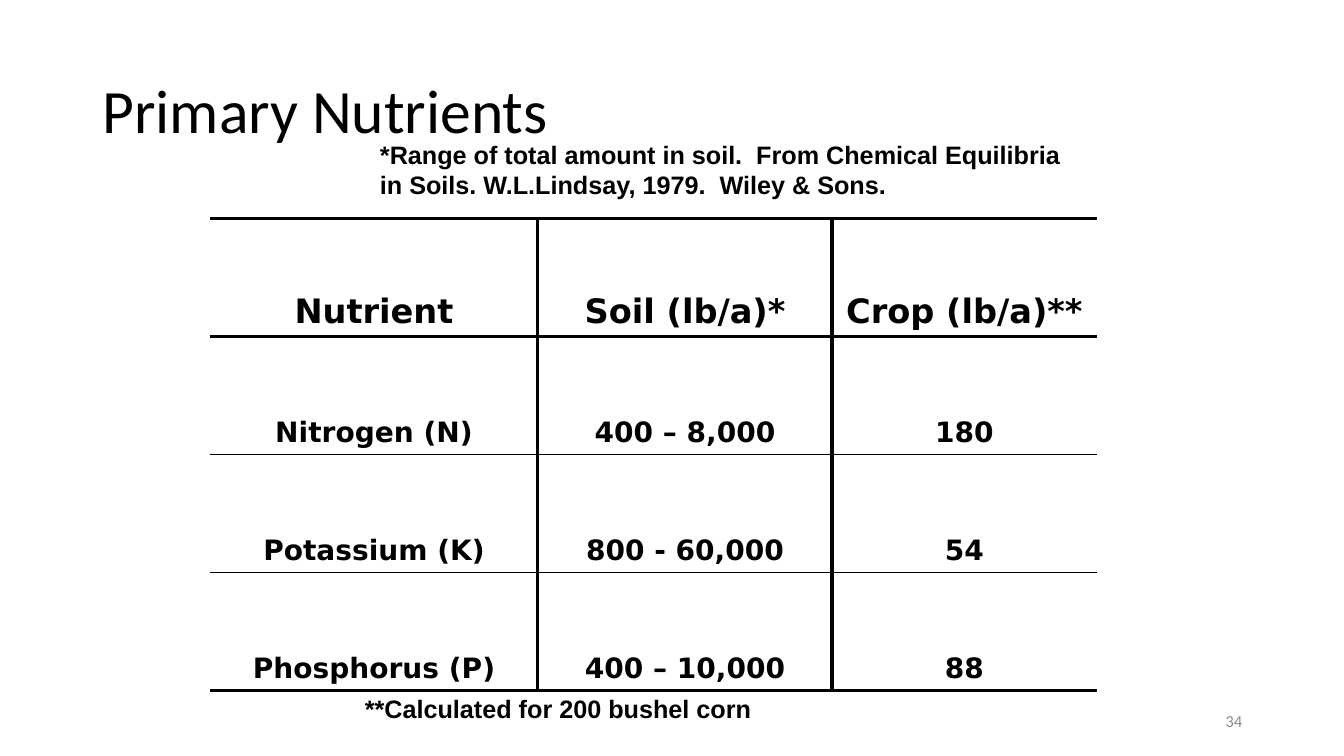
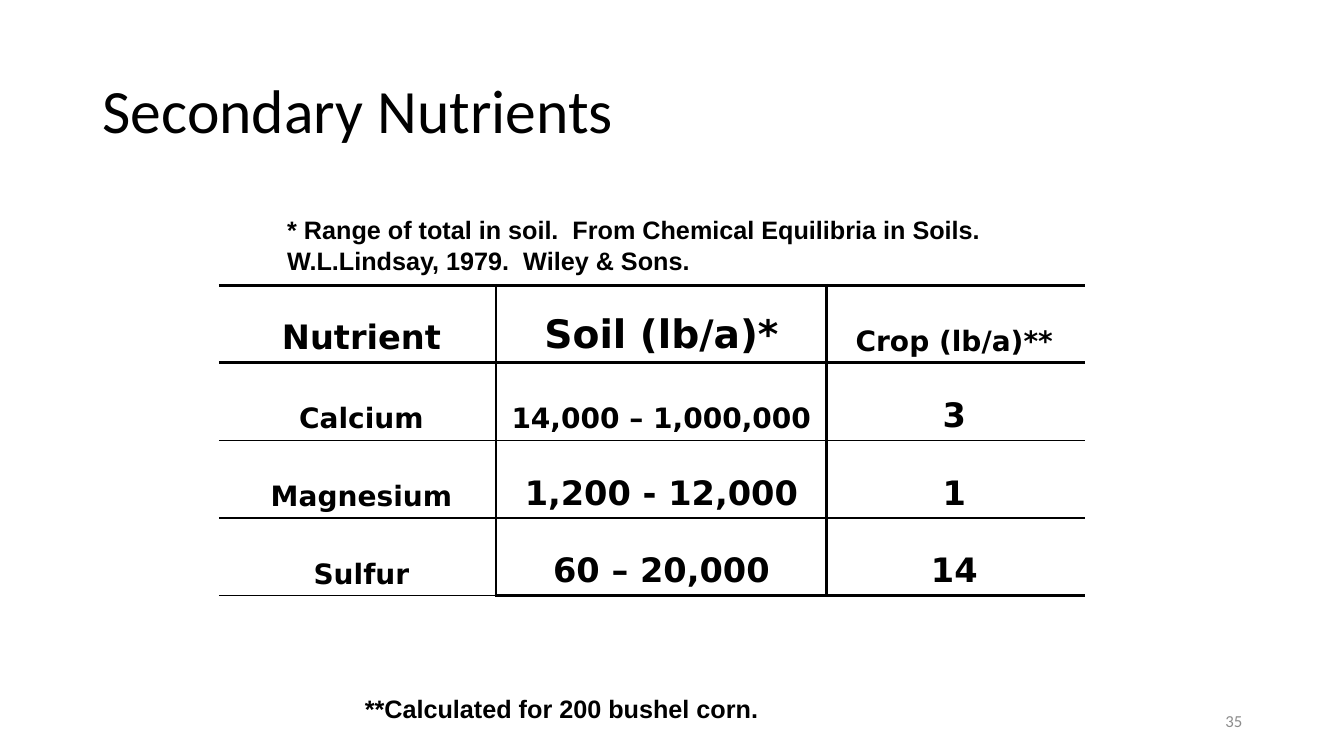
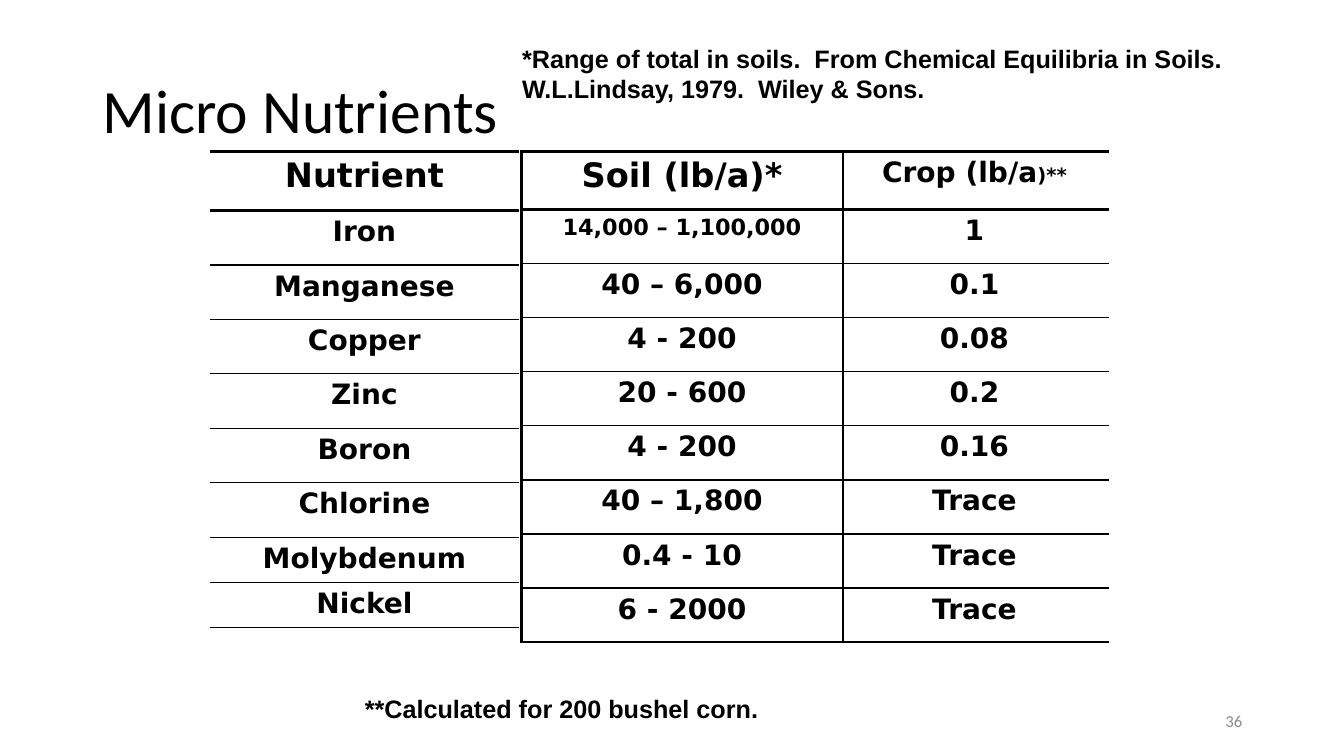
from lxml import etree
from pptx import Presentation
from pptx.dml.color import RGBColor
from pptx.enum import text
from pptx.oxml import ns
from pptx.util import Inches, Pt

BLACK, GRAY = "000000", "8C8C8C"
THICK, THIN = 2.25, 1
TOP, MID, LOW = text.MSO_ANCHOR.TOP, text.MSO_ANCHOR.MIDDLE, text.MSO_ANCHOR.BOTTOM
LEFT, MIDST, RIGHT = text.PP_ALIGN.LEFT, text.PP_ALIGN.CENTER, text.PP_ALIGN.RIGHT


def color(code):
    return RGBColor.from_string(code)


def style(para, name, size, code=BLACK, bold=False, align=LEFT):
    para.alignment = align
    font = para.font
    font.name, font.size, font.bold = name, Pt(size), bold
    font.color.rgb = color(code)


def label(slide, box, words, name, size, anchor=TOP, **look):
    """Add a wrapped one-paragraph text box and return its paragraph."""
    frame = slide.shapes.add_textbox(*map(Inches, box)).text_frame
    frame.word_wrap = True
    frame.vertical_anchor = anchor
    para = frame.paragraphs[0]
    para.text = words
    style(para, name, size, **look)
    return para


def edge(cell, side, width):
    """Draw one cell border; a width of 0 leaves it open."""
    line = etree.SubElement(cell._tc.get_or_add_tcPr(), ns.qn("a:ln" + side))
    if not width:
        etree.SubElement(line, ns.qn("a:noFill"))
        return
    line.set("w", str(Pt(width)))
    fill = etree.SubElement(line, ns.qn("a:solidFill"))
    etree.SubElement(fill, ns.qn("a:srgbClr")).set("val", BLACK)


def write(cell, words, size):
    """Fill a cell with a string, or with (text, size) pairs."""
    para = cell.text_frame.paragraphs[0]
    if isinstance(words, str):
        para.text = words
    else:
        size = words[0][1]
        for part, points in words:
            run = para.add_run()
            run.text = part
            if points != size:
                run.font.size = Pt(points)
    style(para, "DejaVu Sans", size, bold=True, align=MIDST)


def column(slide, spot, width, highs, items, size, sides="", last=THICK, anchor=LOW):
    """Add a one-column table whose top left corner is at spot."""
    box = (*spot, width, sum(highs))
    grid = slide.shapes.add_table(len(items), 1, *map(Inches, box)).table
    grid.first_row = grid.horz_banding = False
    rules = [THICK, THICK] + [THIN] * (len(items) - 2) + [last]
    for i, (high, words) in enumerate(zip(highs, items)):
        grid.rows[i].height = Inches(high)
        cell = grid.cell(i, 0)
        cell.vertical_anchor = anchor
        write(cell, words, size)
        for side in "LR":
            edge(cell, side, THICK if side in sides else 0)
        edge(cell, "T", rules[i])
        edge(cell, "B", rules[i + 1])
        cell.fill.background()


def base(deck, number, title, source, box, foot):
    """Add a slide with its title, page number, source and footnote."""
    slide = deck.slides.add_slide(deck.slide_layouts[6])
    head = label(slide, (0.92, 0.4, 11.5, 1.45), title, "Calibri", 44, MID)
    head.line_spacing = 0.9
    label(slide, (9.42, 6.95, 3, 0.4), str(number), "Calibri", 12, MID,
          code=GRAY, align=RIGHT)
    label(slide, box, source, "Arial", 18, bold=True)
    label(slide, (3.52, 6.83, 6.83, 0.4), foot, "Arial", 18, bold=True)
    return slide


def primary(deck):
    slide = base(deck, 34, "Primary Nutrients",
                 "*Range of total amount in soil.  From Chemical Equilibria in Soils. "
                 "W.L.Lindsay, 1979.  Wiley & Sons.",
                 (3.67, 1.33, 7.09, 0.71), "**Calculated for 200 bushel corn")
    top, highs = 2.17, [1.17] * 4
    column(slide, (2.08, top), 3.26, highs,
           [[("Nutrient", 24)], "Nitrogen (N)", "Potassium (K)", "Phosphorus (P)"], 20)
    column(slide, (5.33, top), 2.93, highs,
           [[("Soil (lb/a)*", 24)], "400 – 8,000", "800 - 60,000", "400 – 10,000"],
           20, sides="LR")
    column(slide, (8.25, top), 2.63, highs,
           [[("Crop (lb/a)**", 24)], "180", "54", "88"], 20, sides="L")


def second(deck):
    slide = base(deck, 35, "Secondary Nutrients",
                 "* Range of total in soil.  From Chemical Equilibria in Soils.  "
                 "W.L.Lindsay, 1979.  Wiley & Sons.",
                 (2.75, 2.08, 8.16, 0.7), "**Calculated for 200 bushel corn.")
    top, highs = 2.83, [0.77] * 4
    column(slide, (2.17, top), 2.83, highs,
           [[("Nutrient", 24)], "Calcium", "Magnesium", "Sulfur"], 20, last=THIN)
    column(slide, (4.92, top), 3.28, highs,
           [[("Soil (lb/a)*", 28)], [("14,000 – 1,000,000", 20)],
            "1,200 - 12,000", "60 – 20,000"], 24, sides="LR")
    column(slide, (8.17, top), 2.59, highs,
           [[("Crop (lb/a)**", 20)], "3", "1", "14"], 24)


def micro(deck):
    slide = base(deck, 36, "Micro Nutrients",
                 "*Range of total in soils.  From Chemical Equilibria in Soils.  "
                 "W.L.Lindsay, 1979.  Wiley & Sons.",
                 (5.08, 0.38, 7.59, 0.71), "**Calculated for 200 bushel corn.")
    top, tall = 1.5, 4.87
    highs = [0.58] + [(tall - 0.58) / 8] * 8
    column(slide, (2.08, top), 3.07, [0.59] + [0.54] * 6 + [0.45] * 2,
           [[("Nutrient", 24)], "Iron", "Manganese", "Copper", "Zinc", "Boron",
            "Chlorine", "Molybdenum", "Nickel"], 20, last=THIN, anchor=TOP)
    column(slide, (5.17, top), 3.19, highs,
           [[("Soil (lb/a)*", 24)], [("14,000 – 1,100,000", 16)], "40 – 6,000",
            "4 - 200", "20 - 600", "4 - 200", "40 – 1,800", "0.4 - 10", "6 - 2000"],
           20, sides="LR", anchor=TOP)
    column(slide, (8.33, top), 2.67, highs,
           [[("Crop (lb/a", 20), (")**", 14)], "1", "0.1", "0.08", "0.2", "0.16"]
           + ["Trace"] * 3, 20, anchor=TOP)


def main():
    deck = Presentation()
    deck.slide_width, deck.slide_height = Inches(13.33), Inches(7.5)
    for build in (primary, second, micro):
        build(deck)
    deck.save("out.pptx")


if __name__ == "__main__":
    main()
